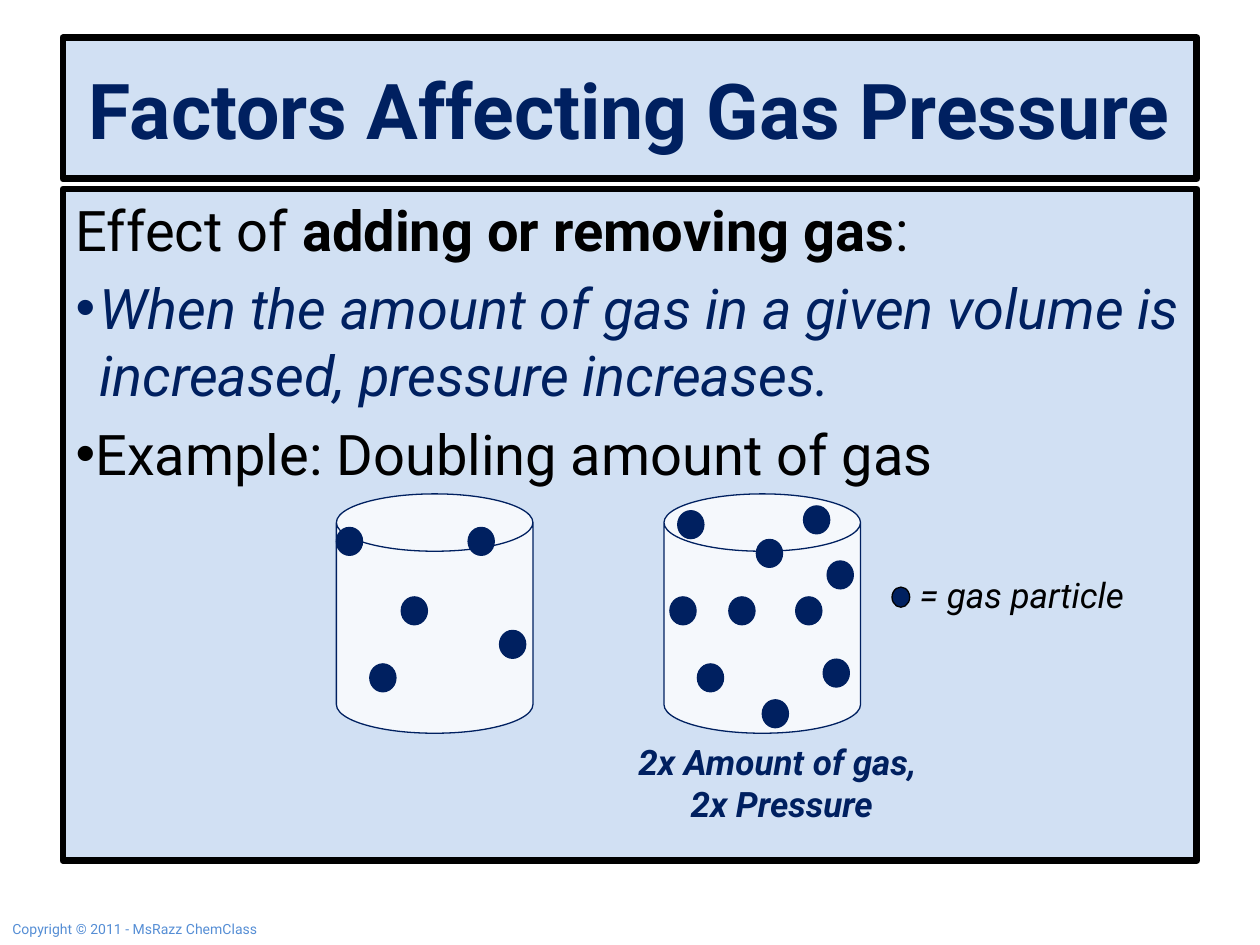
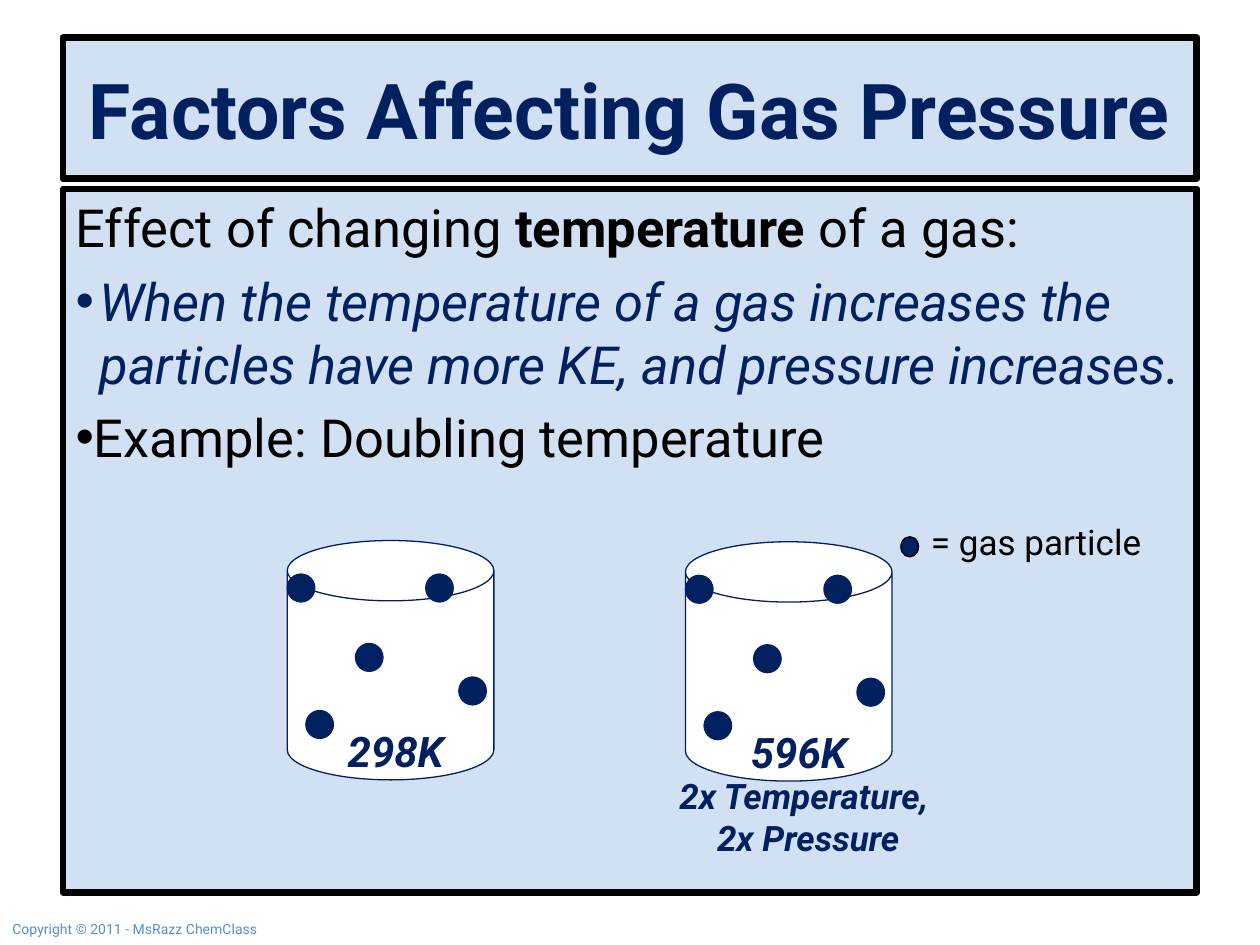
from collections import namedtuple

from lxml import etree
from pptx import Presentation
from pptx import util as u
from pptx.dml.color import RGBColor
from pptx.enum import shapes, text
from pptx.oxml.ns import qn

COLUMNS, ROWS = 100, 75
CELL = u.Inches(0.1)
FONT = "Roboto"
NAVY, BLACK, WHITE = "002060", "000000", "FFFFFF"
PANEL_BLUE, COPYRIGHT_BLUE = "C6D9F1", "558ED5"
PANEL_LEFT, PANEL_WIDTH = 5, 90
LID_DEPTH = 0.292
PARTICLE_WIDTH, PARTICLE_HEIGHT = 2 / 15, 7 / 60

# Left and top of each particle, as shares of its cylinder.
FOUR_PARTICLES = [(0, 0.14), (0.67, 0.14), (0.33, 0.43), (0.83, 0.57)]
FIVE_PARTICLES = FOUR_PARTICLES + [(0.17, 0.71)]
FIVE_WARM_PARTICLES = FOUR_PARTICLES + [(0.09, 0.71)]
TEN_PARTICLES = [
    (0.07, 0.07), (0.71, 0.05), (0.47, 0.19), (0.83, 0.28), (0.03, 0.43),
    (0.33, 0.43), (0.67, 0.43), (0.17, 0.71), (0.81, 0.69), (0.5, 0.86),
]

Box = namedtuple("Box", "left top width height")


def color(hex_string):
    return RGBColor.from_string(hex_string)


def emu(box):
    """Turn grid columns and rows into slide lengths."""
    return [round(length * CELL) for length in box]


def inside(box, left, top, width, height):
    """Return the part of a box that the given shares describe."""
    return Box(box.left + left * box.width, box.top + top * box.height,
               width * box.width, height * box.height)


def paint(shape, fill, line, line_width=0.75, opacity=100):
    shape.fill.solid()
    shape.fill.fore_color.rgb = color(fill)
    if opacity < 100:
        fill_color = shape.fill._xPr.find(qn("a:solidFill"))[0]
        etree.SubElement(fill_color, qn("a:alpha"), val=str(opacity * 1000))
    shape.line.color.rgb = color(line)
    shape.line.width = u.Pt(line_width)


def add_run(paragraph, content, size, fill=BLACK, bold=False, italic=False):
    run = paragraph.add_run()
    run.text = content
    font = run.font
    font.name, font.size = FONT, u.Pt(size)
    font.bold, font.italic = bold, italic
    font.color.rgb = color(fill)


def add_text(slide, box, *lines, align=text.PP_ALIGN.LEFT, after=10, **style):
    frame = slide.shapes.add_textbox(*emu(box)).text_frame
    frame.word_wrap = True
    paragraph = frame.paragraphs[0]
    paragraph.alignment = align
    paragraph.space_after = u.Pt(after)
    for number, line in enumerate(lines):
        if number:
            paragraph.add_line_break()
        add_run(paragraph, line, **style)


def add_centered_navy(slide, box, *lines, size=20):
    add_text(slide, box, *lines, align=text.PP_ALIGN.CENTER, size=size,
             fill=NAVY, bold=True, italic=True)


def set_list_style(paragraph, bullet=False, hanging=0.0):
    properties = paragraph._p.get_or_add_pPr()
    properties.set("marL", str(u.Inches(hanging)))
    properties.set("indent", str(-u.Inches(hanging)))
    if bullet:
        etree.SubElement(properties, qn("a:buFont"), typeface="Arial")
        etree.SubElement(properties, qn("a:buChar"), char="•")
    else:
        etree.SubElement(properties, qn("a:buNone"))


def make_panel(placeholder, top, height, anchor):
    box = Box(PANEL_LEFT, top, PANEL_WIDTH, height)
    placeholder.left, placeholder.top, placeholder.width, placeholder.height = emu(box)
    paint(placeholder, PANEL_BLUE, BLACK, line_width=4, opacity=80)
    frame = placeholder.text_frame
    frame.auto_size = text.MSO_AUTO_SIZE.NONE
    frame.word_wrap = True
    frame.vertical_anchor = anchor
    return frame


def fill_body(frame, size, heading, rule, example):
    """Write a heading of (words, bold) pairs, then the rule and its example."""
    paragraph = frame.paragraphs[0]
    set_list_style(paragraph)
    paragraph.space_before = u.Pt(0)
    for words, bold in heading:
        add_run(paragraph, words, size, bold=bold)
    for words, hanging, style in (
        (rule, 0.19, {"fill": NAVY, "italic": True}),
        (example, 0, {}),
    ):
        paragraph = frame.add_paragraph()
        paragraph.space_before = u.Pt(size * 0.2)
        set_list_style(paragraph, bullet=True, hanging=hanging)
        add_run(paragraph, words, size, **style)


def add_particle(parent, box, line=NAVY):
    particle = parent.shapes.add_shape(shapes.MSO_SHAPE.OVAL, *emu(box))
    particle.shadow.inherit = False
    paint(particle, NAVY, line)


def add_cylinder(slide, box, particles, opacity=100):
    group = slide.shapes.add_group_shape()
    can = group.shapes.add_shape(shapes.MSO_SHAPE.CAN, *emu(box))
    can.adjustments[0] = LID_DEPTH
    can.shadow.inherit = False
    paint(can, WHITE, NAVY, opacity=opacity)
    for left, top in particles:
        add_particle(group, inside(box, left, top, PARTICLE_WIDTH, PARTICLE_HEIGHT))


def add_legend(slide, dot_left, dot_top, label_left, label_top, italic=False):
    add_particle(slide, Box(dot_left, dot_top, 1.4, 1.6), line=BLACK)
    add_text(slide, Box(label_left, label_top, 19.9, 5.8), "= gas particle",
             size=20, italic=italic)


def add_factor_slide(presentation, body_height, size, heading, rule, example):
    slide = presentation.slides.add_slide(presentation.slide_layouts[1])
    add_text(slide, Box(0, 72.6, 23.7, 2.4), "Copyright © 2011 - MsRazz ChemClass",
             size=8, fill=COPYRIGHT_BLUE, after=0)
    title = make_panel(slide.shapes.title, 3, 11.2, text.MSO_ANCHOR.MIDDLE)
    title.paragraphs[0].alignment = text.PP_ALIGN.CENTER
    add_run(title.paragraphs[0], "Factors Affecting Gas Pressure", 44, NAVY, bold=True)
    body = make_panel(slide.placeholders[1], 15, body_height, text.MSO_ANCHOR.TOP)
    fill_body(body, size, heading, rule, example)
    return slide


def add_amount_slide(presentation):
    slide = add_factor_slide(
        presentation, 53.3, 32,
        [("Effect of ", False), ("adding or removing gas", True), (":", False)],
        "When the amount of gas in a given volume is increased, pressure increases.",
        "Example: Doubling amount of gas")
    add_legend(slide, 70.8, 46.6, 72, 45, italic=True)
    add_centered_navy(slide, Box(48.7, 58.3, 26.7, 8.3),
                      "2x Amount of gas, ", "2x Pressure")
    for left, particles in ((26.7, FIVE_PARTICLES), (52.7, TEN_PARTICLES)):
        add_cylinder(slide, Box(left, 39.2, 15.6, 19), particles, opacity=80)


def add_temperature_slide(presentation):
    slide = add_factor_slide(
        presentation, 55.8, 30,
        [("Effect of changing ", False), ("temperature", True), (" of a gas:", False)],
        "When the temperature of a gas increases the particles have more KE, "
        "and pressure increases.",
        "Example: Doubling temperature")
    add_legend(slide, 71.5, 42.6, 72.9, 40.8)
    for left, top, label, label_left, label_width in (
        (22.8, 42.9, "298K", 25.3, 12.2),
        (54.4, 43, "596K", 56, 14.8),
    ):
        add_cylinder(slide, Box(left, top, 16.4, 19), FIVE_WARM_PARTICLES)
        add_centered_navy(slide, Box(label_left, top + 14.2, label_width, 4.2),
                          label, size=24)
    add_centered_navy(slide, Box(52, 61, 24.3, 8.3), "2x Temperature, ", "2x Pressure")


def main():
    presentation = Presentation()
    presentation.slide_width = COLUMNS * CELL
    presentation.slide_height = ROWS * CELL
    add_amount_slide(presentation)
    add_temperature_slide(presentation)
    presentation.save("out.pptx")


if __name__ == "__main__":
    main()
